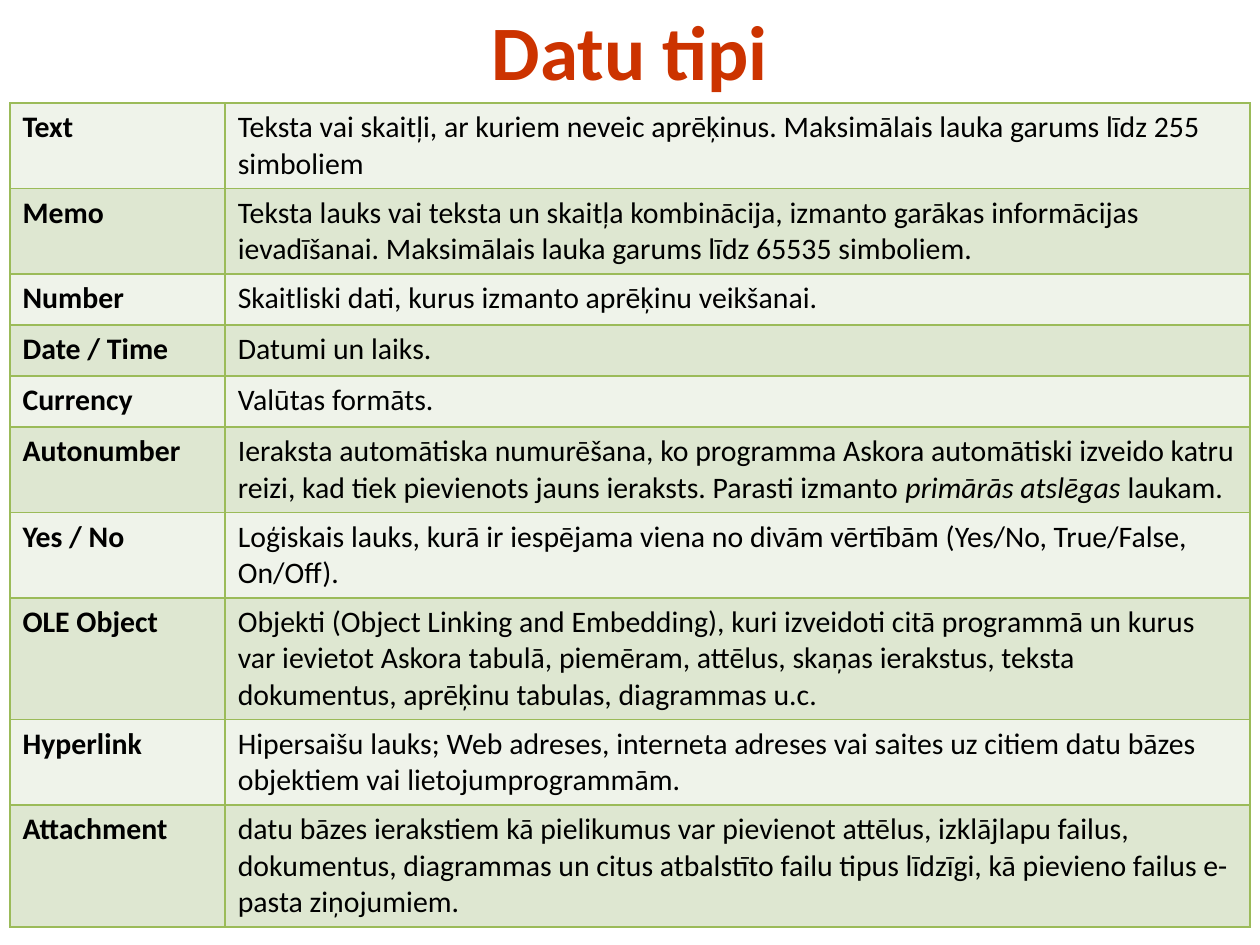
from lxml import etree
from pptx import Presentation
from pptx import util as u
from pptx.dml.color import RGBColor
from pptx.enum import text
from pptx.oxml import ns

TITLE_RED = RGBColor(0xCC, 0x33, 0x00)
BLACK = RGBColor(0x00, 0x00, 0x00)
BORDER_GREEN = RGBColor(0x9B, 0xBB, 0x59)
BAND_COLORS = (RGBColor(0xEF, 0xF3, 0xEA), RGBColor(0xDE, 0xE7, 0xD1))

# Each description is a list of runs; every second run is italic.
DATA_TYPES = [
    ("Text", ["Teksta vai skaitļi, ar kuriem neveic aprēķinus. "
              "Maksimālais lauka garums līdz 255 simboliem"]),
    ("Memo", ["Teksta lauks vai teksta un skaitļa kombinācija, izmanto garākas "
              "informācijas ievadīšanai. Maksimālais lauka garums līdz 65535 simboliem."]),
    ("Number", ["Skaitliski dati, kurus izmanto aprēķinu veikšanai."]),
    ("Date / Time", ["Datumi un laiks."]),
    ("Currency", ["Valūtas formāts."]),
    ("Autonumber", ["Ieraksta automātiska numurēšana, ko programma Askora automātiski "
                    "izveido katru reizi, kad tiek pievienots jauns ieraksts. "
                    "Parasti izmanto ", "primārās atslēgas", " laukam."]),
    ("Yes / No", ["Loģiskais lauks, kurā ir iespējama viena no divām vērtībām "
                  "(Yes/No, True/False, On/Off)."]),
    ("OLE Object", ["Objekti (Object Linking and Embedding), kuri izveidoti citā "
                    "programmā un kurus var ievietot Askora tabulā, piemēram, attēlus, "
                    "skaņas ierakstus, teksta dokumentus, aprēķinu tabulas, "
                    "diagrammas u.c."]),
    ("Hyperlink", ["Hipersaišu lauks; Web adreses, interneta adreses vai saites uz "
                   "citiem datu bāzes objektiem vai lietojumprogrammām."]),
    ("Attachment", ["datu bāzes ierakstiem kā pielikumus var pievienot attēlus, "
                    "izklājlapu failus, dokumentus, diagrammas un citus atbalstīto "
                    "failu tipus līdzīgi, kā pievieno failus e-pasta ziņojumiem."]),
]


class SlideBuilder:
    font_name = "Calibri"
    title_size = u.Pt(44)
    table_size = u.Pt(17)
    border_width = u.Pt(1)

    def __init__(self, slide):
        self.slide = slide

    def style(self, paragraph, size, color, bold):
        font = paragraph.font
        font.name, font.size, font.bold = self.font_name, size, bold
        font.color.rgb = color

    def title(self, words, left, top, width, height):
        shape = self.slide.shapes.title
        shape.left, shape.top, shape.width, shape.height = left, top, width, height
        shape.text_frame.text = words
        shape.text_frame.vertical_anchor = text.MSO_ANCHOR.MIDDLE
        paragraph = shape.text_frame.paragraphs[0]
        paragraph.alignment = text.PP_ALIGN.CENTER
        self.style(paragraph, self.title_size, TITLE_RED, True)

    def border(self, cell):
        properties = cell._tc.get_or_add_tcPr()
        for side in ("lnL", "lnR", "lnT", "lnB"):
            line = etree.SubElement(properties, ns.qn(f"a:{side}"), w=str(self.border_width))
            fill = etree.SubElement(line, ns.qn("a:solidFill"))
            etree.SubElement(fill, ns.qn("a:srgbClr"), val=str(BORDER_GREEN))

    def cell(self, cell, runs, fill_color, bold):
        self.border(cell)
        cell.fill.solid()
        cell.fill.fore_color.rgb = fill_color
        paragraph = cell.text_frame.paragraphs[0]
        self.style(paragraph, self.table_size, BLACK, bold)
        for index, words in enumerate(runs):
            run = paragraph.add_run()
            run.text = words
            if index % 2:
                run.font.italic = True

    def table(self, rows, left, top, column_widths, row_height, height):
        """Rows start at row_height and grow with their text to fill height."""
        frame = self.slide.shapes.add_table(
            len(rows), len(column_widths), left, top, sum(column_widths), height)
        table = frame.table
        table.first_row = table.horz_banding = False
        for column, width in zip(table.columns, column_widths):
            column.width = width
        for index, (name, description) in enumerate(rows):
            table.rows[index].height = row_height
            band = BAND_COLORS[index % 2]
            self.cell(table.cell(index, 0), [name], band, True)
            self.cell(table.cell(index, 1), description, band, False)
        frame.height = height


def main():
    presentation = Presentation()
    presentation.slide_width, presentation.slide_height = u.Cm(25.4), u.Cm(19.05)
    title_only = presentation.slide_layouts[5]
    builder = SlideBuilder(presentation.slides.add_slide(title_only))
    builder.title("Datu tipi", u.Cm(1.27), u.Cm(-0.58), u.Cm(22.86), u.Cm(3.18))
    builder.table(DATA_TYPES, u.Cm(0.2), u.Cm(2.08), (u.Cm(4.34), u.Cm(20.66)),
                  u.Cm(1.03), u.Cm(16.38))
    presentation.save("out.pptx")


if __name__ == "__main__":
    main()
